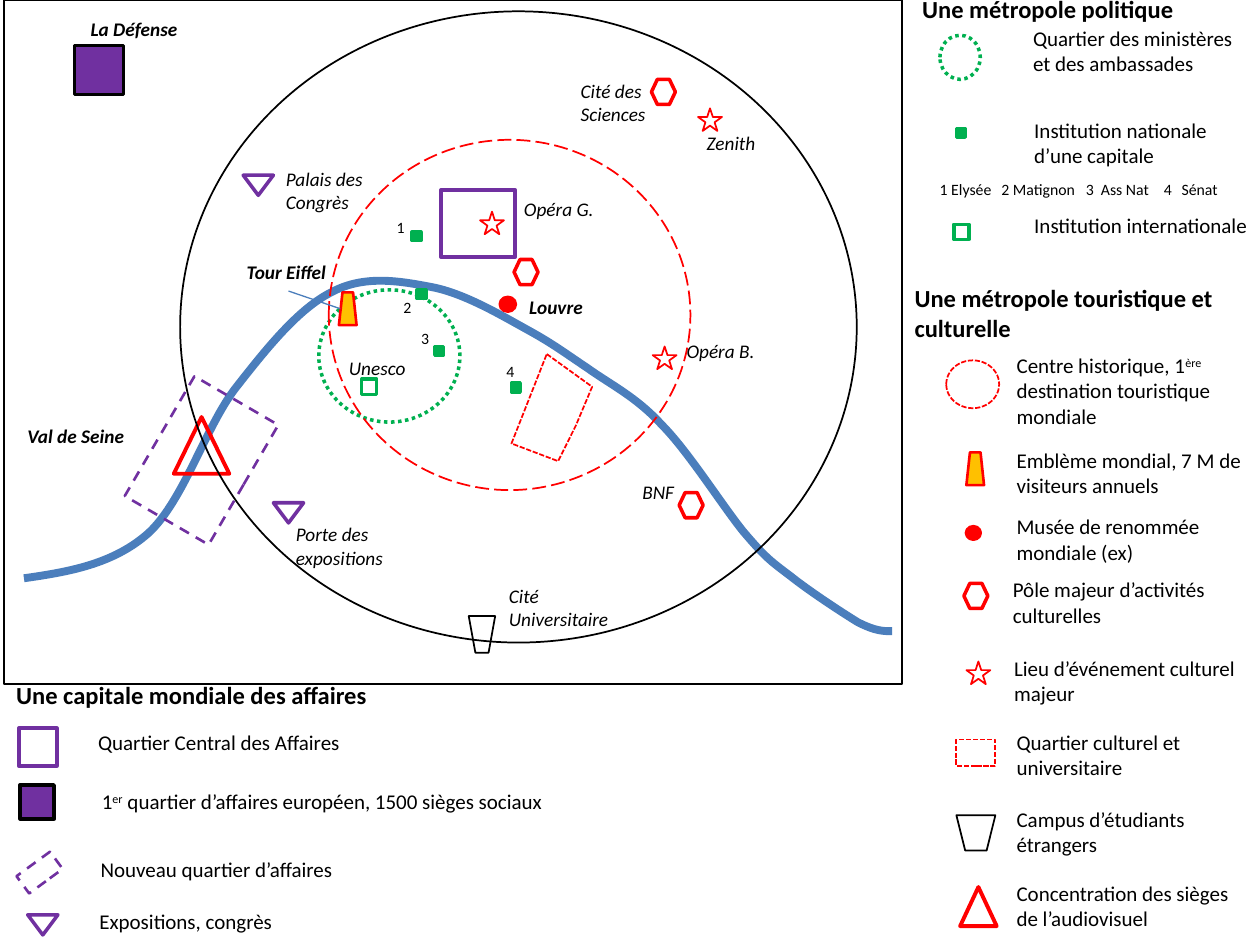
from dataclasses import dataclass

from lxml.etree import SubElement
from pptx import Presentation
from pptx.dml.color import RGBColor
from pptx.enum.dml import MSO_LINE
from pptx.enum.shapes import MSO_CONNECTOR, MSO_SHAPE
from pptx.enum.text import MSO_AUTO_SIZE
from pptx.oxml.ns import qn
from pptx.util import Inches, Pt

COLORS = {"black": "000000", "purple": "7030A0", "green": "00B050", "red": "FF0000",
          "gold": "FFC000", "river": "4B7EBC"}

FORMATS = {
    "heading": {"size": Pt(14), "bold": True},
    "legend": {"size": Pt(12)},
    "place": {"size": Pt(11), "italic": True},
    "landmark": {"size": Pt(11), "bold": True, "italic": True},
    "number": {"size": Pt(9)},
}


@dataclass(frozen=True)
class Style:
    line: str
    weight: float
    fill: str | None = None
    dash: MSO_LINE | None = None


@dataclass(frozen=True)
class Symbol:
    preset: MSO_SHAPE
    style: Style
    places: tuple
    size: tuple | None = None
    rotation: float = 0


@dataclass(frozen=True)
class Label:
    text: str
    left: float
    top: float
    width: float
    height: float
    kind: str
    tabs: tuple = ()


RIVER = Style("river", 4.5)
LEADER = Style("river", 0.75)
CAMPUS = Style("red", 1, dash=MSO_LINE.SQUARE_DOT)
BUSINESS = Style("purple", 2.25)
NEW_BUSINESS = Style("purple", 1.5, dash=MSO_LINE.DASH)
MINISTRIES = Style("green", 2, dash=MSO_LINE.ROUND_DOT)
THIN_RED = Style("red", 1)
THIN_BLACK = Style("black", 1)

RIVER_POINTS = (
    (0.19, 4.59), (0.54, 4.54), (0.9, 4.48), (1.18, 4.23), (1.46, 3.97), (1.63, 3.39),
    (1.87, 3.08), (2.12, 2.76), (2.37, 2.45), (2.63, 2.32), (2.89, 2.18), (3.17, 2.23),
    (3.43, 2.28), (3.69, 2.33), (3.99, 2.51), (4.19, 2.62), (4.39, 2.73), (4.48, 2.8),
    (4.66, 2.92), (4.84, 3.05), (5.05, 3.15), (5.25, 3.37), (5.46, 3.58), (5.73, 4.01),
    (5.9, 4.22), (6.07, 4.42), (6.11, 4.45), (6.27, 4.57), (6.42, 4.69), (6.68, 4.86),
    (6.81, 4.94), (6.95, 5.01), (7.01, 5.01), (7.08, 5.01),
)
LATIN_QUARTER = ((4.34, 2.81), (4.7, 3.07), (4.57, 3.38), (4.43, 3.66), (4.06, 3.52))

SYMBOLS = (
    Symbol(MSO_SHAPE.RECTANGLE, Style("black", 2, "purple"),
           ((0.59, 0.36, 0.39, 0.39), (0.16, 6.23, 0.27, 0.27))),
    Symbol(MSO_SHAPE.ISOSCELES_TRIANGLE, Style("purple", 2),
           ((2.17, 3.99), (1.93, 1.39), (0.22, 7.26)), (0.24, 0.16), 180),
    Symbol(MSO_SHAPE.RECTANGLE, Style("green", 2),
           ((2.87, 3.01), (7.57, 1.78)), (0.12, 0.12)),
    Symbol(MSO_SHAPE.RECTANGLE, Style("green", 2, "green"),
           ((3.31, 2.3), (3.45, 2.75), (3.27, 1.84), (4.06, 3.04), (7.59, 1.02)), (0.07, 0.07)),
    Symbol(MSO_SHAPE.OVAL, Style("red", 2, "red"),
           ((3.97, 2.36, 0.12, 0.11), (7.67, 4.18, 0.11, 0.1))),
    Symbol(MSO_SHAPE.STAR_5_POINT, THIN_RED,
           ((5.18, 2.75), (5.54, 0.86), (3.81, 1.68), (7.67, 5.25)), (0.19, 0.18)),
    Symbol(MSO_SHAPE.HEXAGON, Style("red", 2),
           ((5.39, 3.91), (4.08, 2.06), (5.17, 0.63), (7.65, 4.63)), (0.19, 0.2)),
    Symbol(MSO_SHAPE.RECTANGLE, NEW_BUSINESS, ((1.05, 3.27, 1.1, 0.77),), rotation=300.2),
    Symbol(MSO_SHAPE.RECTANGLE, NEW_BUSINESS, ((0.15, 6.84, 0.33, 0.17),), rotation=323.8),
    Symbol(MSO_SHAPE.OVAL, MINISTRIES, ((2.53, 2.3, 1.12, 1.05), (7.46, 0.28, 0.32, 0.35))),
    Symbol(MSO_SHAPE.RECTANGLE, CAMPUS, ((7.59, 5.87, 0.31, 0.21),)),
    Symbol(MSO_SHAPE.ISOSCELES_TRIANGLE, Style("red", 2.25),
           ((1.38, 3.31, 0.44, 0.45), (7.62, 7.04, 0.29, 0.31))),
    Symbol(MSO_SHAPE.OVAL, THIN_BLACK, ((1.43, 0.09, 5.37, 5.01),)),
    Symbol(MSO_SHAPE.TRAPEZOID, THIN_BLACK,
           ((3.72, 4.89, 0.21, 0.29), (7.59, 6.47, 0.31, 0.28)), rotation=180),
    Symbol(MSO_SHAPE.RECTANGLE, BUSINESS, ((0.15, 5.78, 0.3, 0.3), (3.5, 1.51, 0.59, 0.53))),
    Symbol(MSO_SHAPE.FLOWCHART_MANUAL_OPERATION, Style("red", 1.5, "gold"),
           ((7.67, 3.59), (2.69, 2.32)), (0.14, 0.26), 180),
    Symbol(MSO_SHAPE.OVAL, Style("red", 1, dash=MSO_LINE.LONG_DASH), ((2.61, 1.11, 2.87, 2.78),)),
    Symbol(MSO_SHAPE.OVAL, CAMPUS, ((7.51, 2.86, 0.42, 0.38),)),
    Symbol(MSO_SHAPE.RECTANGLE, THIN_BLACK, ((0.03, 0, 7.13, 5.43),)),
)

LABELS = (
    Label("Opéra G.", 4.06, 1.52, 0.78, 0.29, "place"),
    Label("Cité des Sciences", 4.51, 0.58, 0.81, 0.47, "place"),
    Label("La Défense", 0.62, 0.09, 1.08, 0.29, "landmark"),
    Label("Opéra B.", 5.35, 2.64, 0.78, 0.29, "place"),
    Label("Porte des expositions", 2.25, 4.1, 0.99, 0.47, "place"),
    Label("Palais des Congrès", 2.17, 1.28, 1.08, 0.47, "place"),
    Label("BNF", 5, 3.76, 0.5, 0.29, "place"),
    Label("Unesco", 2.67, 2.78, 0.72, 0.29, "place"),
    Label("Zenith", 5.51, 0.99, 0.69, 0.3, "place"),
    Label("Cité Universitaire", 3.94, 4.59, 1.07, 0.47, "place"),
    Label("Val de Seine", 0.12, 3.32, 1, 0.29, "landmark"),
    Label("Tour Eiffel", 1.86, 2.02, 0.87, 0.29, "landmark"),
    Label("Louvre", 4.1, 2.29, 0.69, 0.29, "landmark"),
    Label("1", 3.05, 1.68, 0.21, 0.25, "number"),
    Label("2", 3.14, 2.31, 0.16, 0.25, "number"),
    Label("3", 3.29, 2.56, 0.15, 0.25, "number"),
    Label("4", 3.92, 2.82, 0.24, 0.25, "number"),
    Label("Une capitale mondiale des affaires", 0.03, 5.35, 4.26, 0.34, "heading"),
    Label("Quartier Central des Affaires", 0.68, 5.74, 2.58, 0.3, "legend"),
    Label("1^er^ quartier d’affaires européen, 1500 sièges sociaux", 0.71, 6.21, 4.76, 0.3, "legend"),
    Label("Nouveau quartier d’affaires", 0.7, 6.75, 3.17, 0.3, "legend"),
    Label("Expositions, congrès", 0.69, 7.16, 2.69, 0.3, "legend"),
    Label("Une métropole politique", 7.22, -0.1, 2.92, 0.34, "heading"),
    Label("Quartier des ministères et des ambassades", 8.1, 0.15, 1.89, 0.5, "legend"),
    Label("Institution nationale d’une capitale", 8.11, 0.88, 1.89, 0.5, "legend"),
    Label("1 Elysée\t2 Matignon\t3\tAss Nat\t4\tSénat", 7.36, 1.38, 2.64, 0.25, "number",
          (0.49, 1.16, 1.28, 1.78, 1.92)),
    Label("Institution internationale", 8.11, 1.64, 1.92, 0.3, "legend"),
    Label("Une métropole touristique et culturelle", 7.16, 2.2, 2.68, 0.57, "heading"),
    Label("Centre historique, 1^ère^ destination touristique mondiale", 7.97, 2.75, 2.05, 0.71, "legend"),
    Label("Emblème mondial, 7 M de visiteurs annuels", 7.97, 3.5, 2.05, 0.5, "legend"),
    Label("Musée de renommée mondiale (ex)", 7.97, 4.03, 2.1, 0.5, "legend"),
    Label("Pôle majeur d’activités culturelles", 7.94, 4.53, 2.06, 0.5, "legend"),
    Label("Lieu d’événement culturel majeur", 7.95, 5.15, 2.06, 0.5, "legend"),
    Label("Quartier culturel et universitaire", 7.97, 5.74, 2.06, 0.5, "legend"),
    Label("Campus d’étudiants étrangers", 7.97, 6.35, 2.06, 0.5, "legend"),
    Label("Concentration des sièges de l’audiovisuel", 7.97, 6.94, 2.06, 0.5, "legend"),
)


def color(name: str) -> RGBColor:
    return RGBColor.from_string(COLORS[name])


def style_line(line, style: Style) -> None:
    line.color.rgb = color(style.line)
    line.width = Pt(style.weight)
    if style.dash:
        line.dash_style = style.dash


def style_shape(shape, style: Style) -> None:
    shape.shadow.inherit = False
    style_line(shape.line, style)
    if style.fill:
        shape.fill.solid()
        shape.fill.fore_color.rgb = color(style.fill)
    else:
        shape.fill.background()


def draw_outline(page, points: tuple, style: Style, close: bool):
    corners = [(Inches(x), Inches(y)) for x, y in points]
    builder = page.shapes.build_freeform(*corners[0])
    builder.add_line_segments(corners[1:], close=close)
    shape = builder.convert_to_shape()
    style_shape(shape, style)
    return shape


def draw_curve(page, points: tuple, style: Style) -> None:
    shape = draw_outline(page, points, style, close=False)
    segments = list(shape._element.iter(qn("a:lnTo")))
    outline = segments[0].getparent()
    for first in range(0, len(segments), 3):
        curve = SubElement(outline, qn("a:cubicBezTo"))
        for segment in segments[first:first + 3]:
            curve.append(segment[0])
            outline.remove(segment)


def draw_symbol(page, symbol: Symbol) -> None:
    for place in symbol.places:
        bounds = place + (symbol.size or ())
        shape = page.shapes.add_shape(symbol.preset, *map(Inches, bounds))
        shape.rotation = symbol.rotation
        style_shape(shape, symbol.style)


def draw_label(page, label: Label) -> None:
    bounds = (label.left, label.top, label.width, label.height)
    frame = page.shapes.add_textbox(*map(Inches, bounds)).text_frame
    frame.word_wrap = True
    frame.auto_size = MSO_AUTO_SIZE.SHAPE_TO_FIT_TEXT
    para = frame.paragraphs[0]
    if label.tabs:
        stops = SubElement(para._p.get_or_add_pPr(), qn("a:tabLst"))
        for stop in label.tabs:
            SubElement(stops, qn("a:tab"), pos=str(Inches(stop)), algn="l")
    for index, piece in enumerate(label.text.split("^")):
        span = para.add_run()
        span.text = piece
        span.font.name = "Calibri"
        span.font.color.rgb = color("black")
        for attribute, value in FORMATS[label.kind].items():
            setattr(span.font, attribute, value)
        if index % 2:
            span._r.get_or_add_rPr().set("baseline", "30000")


def draw_leader(page, start: tuple, end: tuple, style: Style) -> None:
    leader = page.shapes.add_connector(MSO_CONNECTOR.STRAIGHT, *map(Inches, start + end))
    style_line(leader.line, style)
    SubElement(leader._element.spPr, qn("a:effectLst"))


def main() -> None:
    deck = Presentation()
    deck.slide_width, deck.slide_height = Inches(10), Inches(7.5)
    page = deck.slides.add_slide(deck.slide_layouts[6])
    draw_curve(page, RIVER_POINTS, RIVER)
    draw_outline(page, LATIN_QUARTER, CAMPUS, close=True)
    for symbol in SYMBOLS:
        draw_symbol(page, symbol)
    for label in LABELS:
        draw_label(page, label)
    draw_leader(page, (2.29, 2.31), (2.7, 2.45), LEADER)
    deck.save("out.pptx")


if __name__ == "__main__":
    main()
